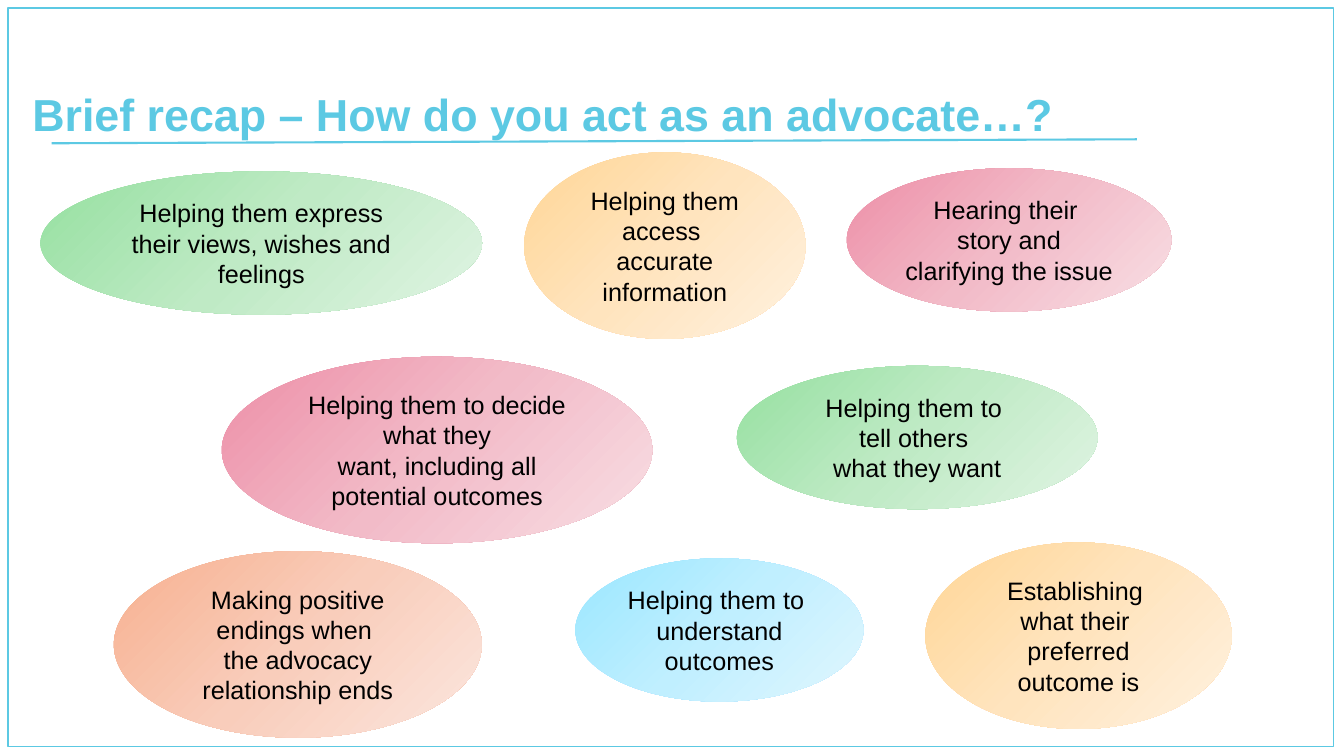
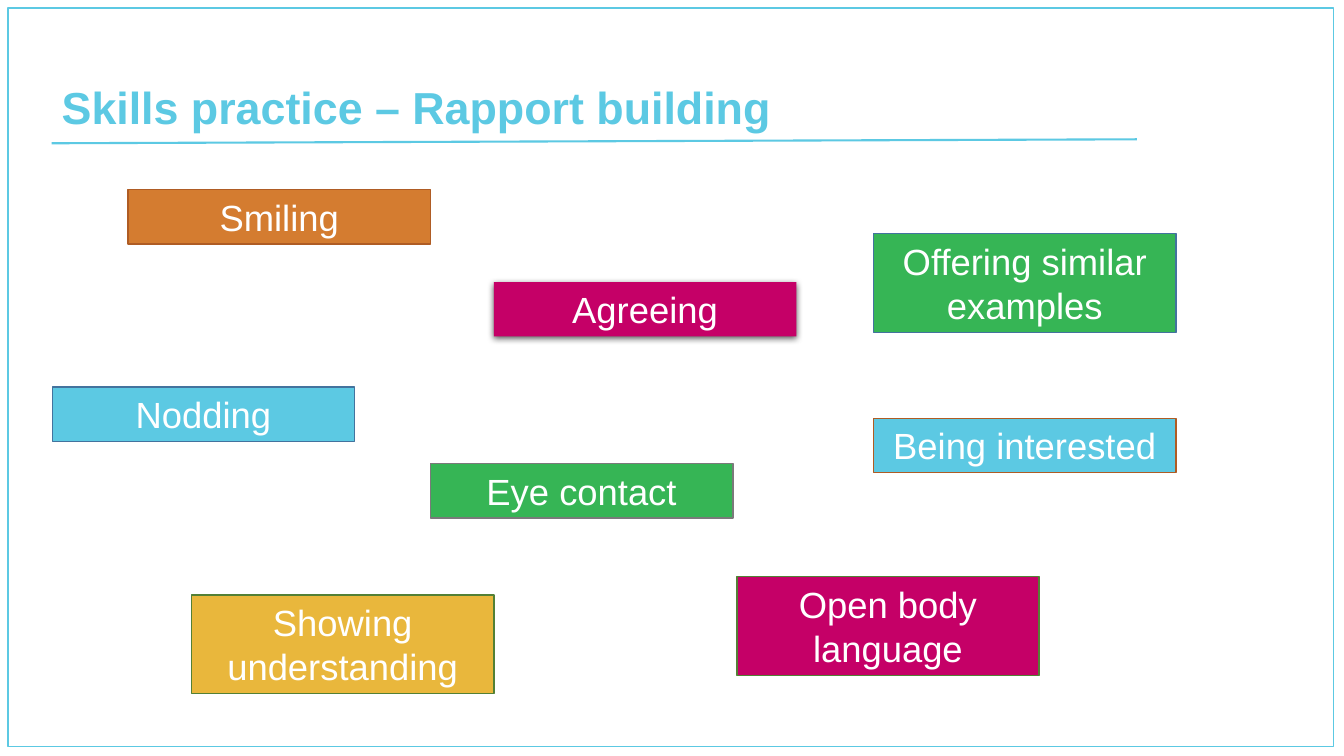
from copy import deepcopy

from lxml import etree
from pptx import Presentation
from pptx.dml.color import RGBColor
from pptx.enum.shapes import MSO_CONNECTOR, MSO_SHAPE
from pptx.enum.text import MSO_ANCHOR, MSO_AUTO_SIZE, PP_ALIGN
from pptx.oxml.ns import qn
from pptx.util import Cm, Pt

OVAL, RECTANGLE = MSO_SHAPE.OVAL, MSO_SHAPE.RECTANGLE
STRAIGHT = MSO_CONNECTOR.STRAIGHT
LEFT, CENTER = PP_ALIGN.LEFT, PP_ALIGN.CENTER
BOTTOM, MIDDLE = MSO_ANCHOR.BOTTOM, MSO_ANCHOR.MIDDLE
NO_AUTOFIT = MSO_AUTO_SIZE.NONE

FONT = "Arial"
COLORS = {
    "accent": "5CC9E3", "white": "FFFFFF", "black": "000000",
    "orange": "D47C30", "magenta": "C50067", "yellow": "E9B73C", "green": "36B555",
    "rust edge": "AF5C24", "olive edge": "538035", "gray edge": "7A7A7A", "blue edge": "43739E",
}
GRADIENTS = {
    "amber": ("FFD696", "FFE4BE", "FFF1DF"),
    "green": ("95E0A0", "BFEAC5", "E0F4E3"),
    "pink": ("ED8EA7", "F2BBC8", "F8DEE4"),
    "coral": ("F7B08F", "F9CDBB", "FBE6DE"),
    "blue": ("9AE7FF", "C0EFFF", "E0F6FE"),
}

# Slide 1: text (\n paragraph, \v line break), gradient, left, top, width, lines of text
RECAP_TITLE = "Brief recap – How do you act as an advocate…?"
RECAP_OVALS = [
    ("Helping them access \naccurate information", "amber", 13.21, 3.84, 7.09, 4),
    ("Helping them express their views, wishes and feelings", "green", 1.02, 4.32, 11.13, 3),
    ("Hearing their \vstory and clarifying the issue", "pink", 21.34, 4.24, 8.18, 3),
    ("Helping them to decide what they\nwant, including all potential outcomes",
     "pink", 5.59, 8.99, 10.85, 4),
    ("Making positive endings when \nthe advocacy relationship ends",
     "coral", 2.87, 13.89, 9.27, 4),
    ("Helping them to \nunderstand outcomes", "blue", 14.5, 14.07, 7.26, 3),
    ("Establishing \vwhat their \npreferred outcome is", "amber", 23.32, 13.67, 7.72, 4),
    ("Helping them to \vtell others \nwhat they want", "green", 18.57, 9.22, 9.09, 3),
]
OVAL_HEIGHTS = {3: 3.61, 4: 4.7}

# Slide 2: text, fill, edge (None: shadow instead), left, top, lines of text
SKILLS_TITLE = "Skills practice – Rapport building"
SKILL_BOXES = [
    ("Smiling", "orange", "rust edge", 3.23, 4.78, 1),
    ("Open body language", "magenta", "olive edge", 18.57, 14.53, 2),
    ("Showing understanding", "yellow", "olive edge", 4.83, 14.99, 2),
    ("Being interested", "accent", "rust edge", 22.02, 10.54, 1),
    ("Eye contact", "green", "gray edge", 10.85, 11.68, 1),
    ("Nodding", "accent", "blue edge", 1.32, 9.75, 1),
    ("Offering similar examples", "green", "blue edge", 22.02, 5.89, 2),
    ("Agreeing", "magenta", None, 12.45, 7.11, 1),
]
BOX_WIDTH = 7.62
BOX_HEIGHTS = {1: 1.37, 2: 2.49}


def rgb(name):
    return RGBColor.from_string(COLORS[name])


def write_text(shape, text, size, color, align, anchor):
    frame = shape.text_frame
    frame.word_wrap = True
    frame.auto_size = NO_AUTOFIT
    frame.vertical_anchor = anchor
    frame.text = text
    for paragraph in frame.paragraphs:
        paragraph.alignment = align
        paragraph.font.name = FONT
        paragraph.font.size = Pt(size)
        paragraph.font.color.rgb = rgb(color)


def add_plain_shape(slide, kind, left, top, width, height):
    shape = slide.shapes.add_shape(kind, Cm(left), Cm(top), Cm(width), Cm(height))
    shape.shadow.inherit = False
    return shape


def set_edge(shape, color):
    if color:
        shape.line.color.rgb = rgb(color)
        shape.line.width = Pt(1)
    else:
        shape.line.fill.background()


def fill_gradient(shape, colors):
    fill = shape.fill
    fill.gradient()
    fill.gradient_angle = 315
    stop_list = shape._element.spPr.find(".//" + qn("a:gsLst"))
    stop_list.insert(1, deepcopy(stop_list[0]))
    for index, (stop, color) in enumerate(zip(fill.gradient_stops, colors)):
        stop.position = index / 2
        stop.color.rgb = RGBColor.from_string(color)


def add_shadow(shape):
    effects = shape._element.spPr.find(qn("a:effectLst"))
    shadow = etree.SubElement(effects, qn("a:outerShdw"), blurRad=str(Pt(4.5)),
                              dist=str(Pt(1.5)), dir="5400000", rotWithShape="0")
    color = etree.SubElement(shadow, qn("a:srgbClr"), val=COLORS["black"])
    etree.SubElement(color, qn("a:alpha"), val="63000")


def add_titled_slide(presentation, text, left, top, width, height):
    """Add a slide with the shared frame, title style and title rule."""
    slide = presentation.slides.add_slide(presentation.slide_layouts[5])
    rule = slide.shapes.add_connector(STRAIGHT, Cm(1.3), Cm(3.61), Cm(28.65), Cm(3.51))
    rule.line.color.rgb = rgb("accent")
    rule.line.width = Pt(1.5)
    etree.SubElement(rule._element.spPr, qn("a:effectLst"))

    border = add_plain_shape(slide, RECTANGLE, 0.2, 0.2, 33.4, 18.62)
    border.fill.background()
    set_edge(border, "accent")

    title = slide.shapes.title
    title.left, title.top, title.width, title.height = map(Cm, (left, top, width, height))
    write_text(title, text, 32, "accent", LEFT, BOTTOM)
    paragraph = title.text_frame.paragraphs[0]
    paragraph.font.bold = True
    paragraph.line_spacing = 0.9
    return slide


def build_recap(presentation):
    slide = add_titled_slide(presentation, RECAP_TITLE, 0.56, 2.06, 29.21, 1.63)
    for text, gradient, left, top, width, lines in RECAP_OVALS:
        oval = add_plain_shape(slide, OVAL, left, top, width, OVAL_HEIGHTS[lines])
        fill_gradient(oval, GRADIENTS[gradient])
        set_edge(oval, None)
        write_text(oval, text, 18, "black", CENTER, MIDDLE)


def build_skills(presentation):
    slide = add_titled_slide(presentation, SKILLS_TITLE, 1.3, 0.74, 19.81, 2.77)
    for text, fill, edge, left, top, lines in SKILL_BOXES:
        box = add_plain_shape(slide, RECTANGLE, left, top, BOX_WIDTH, BOX_HEIGHTS[lines])
        box.fill.solid()
        box.fill.fore_color.rgb = rgb(fill)
        set_edge(box, edge)
        if edge is None:
            add_shadow(box)
        write_text(box, text, 26, "white", CENTER, MIDDLE)


def main():
    presentation = Presentation()
    presentation.slide_width, presentation.slide_height = Cm(33.87), Cm(19.05)
    build_recap(presentation)
    build_skills(presentation)
    presentation.save("out.pptx")


if __name__ == "__main__":
    main()
